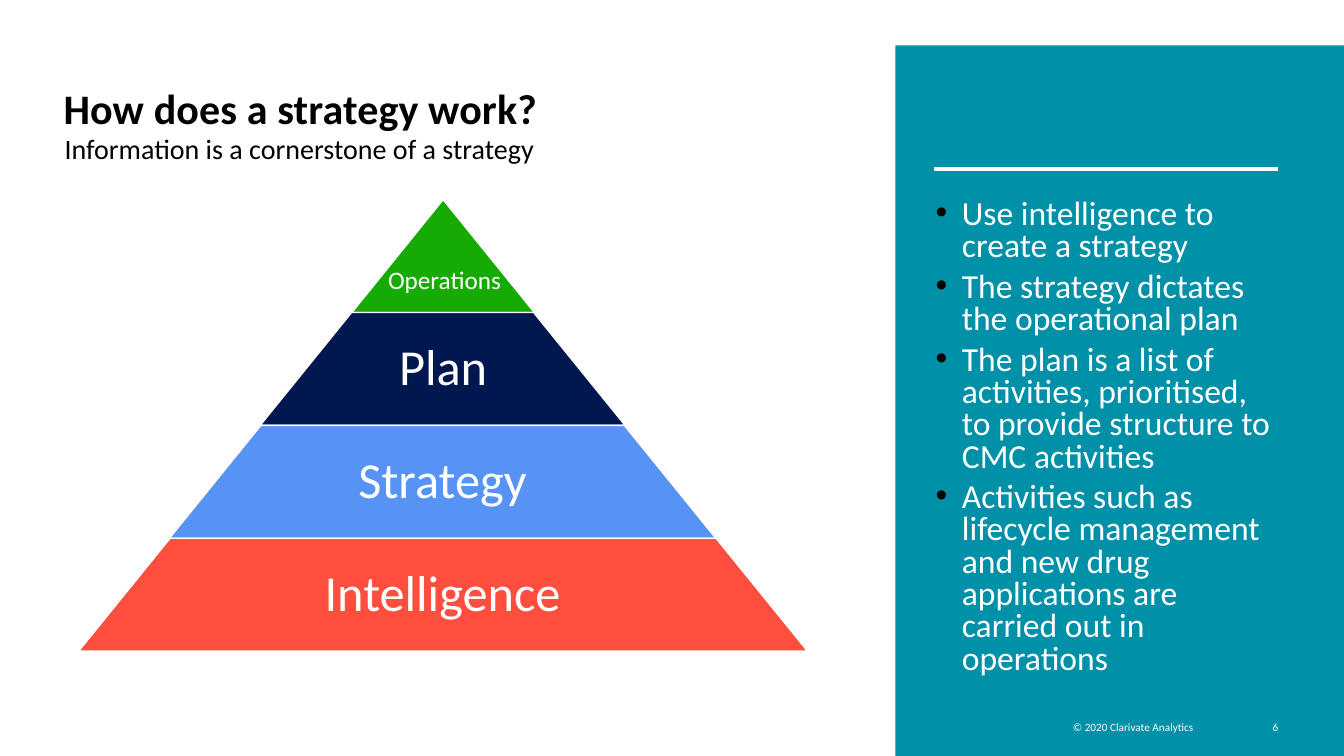
from lxml import etree
from pptx import Presentation
from pptx.dml.color import RGBColor
from pptx.enum.shapes import MSO_CONNECTOR, MSO_SHAPE
from pptx.enum.text import MSO_ANCHOR as ANCHOR, MSO_AUTO_SIZE as AUTO_SIZE, PP_ALIGN as ALIGN
from pptx.oxml.ns import qn
from pptx.util import Pt

PX = 9144
FONT = "Calibri"
TEAL = RGBColor(0x00, 0x90, 0xA8)
WHITE = RGBColor(0xFF, 0xFF, 0xFF)
BLACK = RGBColor(0x00, 0x00, 0x00)
GREEN = RGBColor(0x16, 0xAB, 0x03)
NAVY = RGBColor(0x00, 0x17, 0x50)
BLUE = RGBColor(0x56, 0x93, 0xF5)
RED = RGBColor(0xFF, 0x4E, 0x3E)

TIERS = [("Operations", GREEN), ("Plan", NAVY), ("Strategy", BLUE), ("Intelligence", RED)]
POINTS = [
    "Use intelligence to create a strategy",
    "The strategy dictates the operational plan",
    "The plan is a list of activities, prioritised, to provide structure to CMC activities",
    "Activities such as lifecycle management and new drug applications are carried out in operations",
]


def emu(*lengths):
    """Turn px lengths into EMU."""
    return [length * PX for length in lengths]


def place(shape, left, top, width, height):
    """Move a placeholder to a box given in px."""
    shape.left, shape.top, shape.width, shape.height = emu(left, top, width, height)


def style(frame, size, color, align=ALIGN.LEFT, anchor=ANCHOR.TOP, margins=(0, 0, 0, 0),
          bold=False, spacing=1.0, after=0):
    """Format the frame, its paragraphs and their runs."""
    frame.word_wrap = True
    frame.auto_size = AUTO_SIZE.NONE
    frame.vertical_anchor = anchor
    (frame.margin_left, frame.margin_top,
     frame.margin_right, frame.margin_bottom) = emu(*margins)
    for paragraph in frame.paragraphs:
        paragraph.alignment = align
        paragraph.line_spacing = spacing
        paragraph.space_before = Pt(0)
        paragraph.space_after = Pt(after)
        for run in paragraph.runs:
            run.font.name = FONT
            run.font.size = Pt(size)
            run.font.bold = bold
            run.font.color.rgb = color


def add_text(slide, box, text, size, color, **options):
    """Add a text box in a px box."""
    frame = slide.shapes.add_textbox(*emu(*box)).text_frame
    frame.text = text
    style(frame, size, color, **options)


def add_bullet(paragraph, indent):
    """Give a paragraph a hanging round bullet."""
    properties = paragraph._p.get_or_add_pPr()
    properties.set("marL", str(indent * PX))
    properties.set("indent", str(-indent * PX))
    bullet_color = etree.SubElement(properties, qn("a:buClr"))
    etree.SubElement(bullet_color, qn("a:srgbClr")).set("val", str(BLACK))
    etree.SubElement(properties, qn("a:buFont")).set("typeface", "Arial")
    etree.SubElement(properties, qn("a:buChar")).set("char", "•")


def build_heading(slide, left, top, width):
    """Place the title with its subtitle below."""
    title = slide.shapes.title
    place(title, left, top, width, 43)
    title.text_frame.text = "How does a strategy work?"
    style(title.text_frame, 30, BLACK, bold=True, spacing=0.85)
    title.text_frame.paragraphs[0].runs[0]._r.get_or_add_rPr().set("spc", "10")
    add_text(slide, (left + 1, top + 41, width, 34), "Information is a cornerstone of a strategy",
             20, BLACK, margins=(0, 4, 0, 0), spacing=0.9)


def build_pyramid(slide, left, top, width, height):
    """Stack the tiers from the peak down to the base."""
    step = width / len(TIERS)
    tier_height = height // len(TIERS)
    for level, (label, color) in enumerate(TIERS):
        tier_width = round(step * (level + 1))
        tier_left = left + (width - tier_width) // 2
        tier_top = top + tier_height * level
        tier = slide.shapes.add_shape(
            MSO_SHAPE.TRAPEZOID, *emu(tier_left, tier_top, tier_width, tier_height))
        tier.adjustments[0] = 0.81
        tier.shadow.inherit = False
        tier.fill.solid()
        tier.fill.fore_color.rgb = color
        tier.line.color.rgb = WHITE
        tier.line.width = Pt(1)
        if level == 0:
            add_text(slide, (tier_left + 26, tier_top + 59, 142, 40), label, 18, WHITE,
                     margins=(10, 5, 10, 5))
        else:
            label_width = round(tier_width * 0.65)
            label_left = left + (width - label_width) // 2
            add_text(slide, (label_left, tier_top, label_width, tier_height), label, 36, WHITE,
                     align=ALIGN.CENTER, anchor=ANCHOR.MIDDLE, margins=(5, 5, 5, 5), spacing=0.9)


def build_panel(slide, left, top, width, height):
    """Fill the side panel with its rule, bullet list and footer."""
    panel = slide.shapes.add_shape(MSO_SHAPE.RECTANGLE, *emu(left, top, width, height))
    panel.shadow.inherit = False
    panel.fill.solid()
    panel.fill.fore_color.rgb = TEAL
    panel.line.fill.background()
    slide.shapes._spTree.insert(2, panel._element)

    rule_y = top + 123
    rule = slide.shapes.add_connector(
        MSO_CONNECTOR.STRAIGHT, *emu(left + 38, rule_y, left + 380, rule_y))
    rule.line.color.rgb = WHITE
    rule.line.width = Pt(3)
    etree.SubElement(rule._element.spPr, qn("a:effectLst"))

    points = slide.placeholders[1]
    place(points, left + 40, top + 153, 341, 497)
    points.text_frame.text = "\n".join(POINTS)
    for paragraph in points.text_frame.paragraphs:
        add_bullet(paragraph, 26)
    style(points.text_frame, 24, WHITE, spacing=0.8, after=6)

    footer_top = top + 670
    add_text(slide, (left + 40, footer_top, 256, 18), "© 2020 Clarivate Analytics", 8, WHITE,
             align=ALIGN.RIGHT)
    add_text(slide, (left + 348, footer_top, 32, 18), "6", 8, WHITE, align=ALIGN.RIGHT)


def main():
    """Build and save the strategy slide."""
    deck = Presentation()
    deck.slide_width, deck.slide_height = emu(1333, 750)
    slide = deck.slides.add_slide(deck.slide_layouts[1])
    build_panel(slide, 888, 45, 445, 705)
    build_heading(slide, 63, 89, 783)
    build_pyramid(slide, 78, 198, 723, 448)
    deck.save("out.pptx")


if __name__ == "__main__":
    main()
